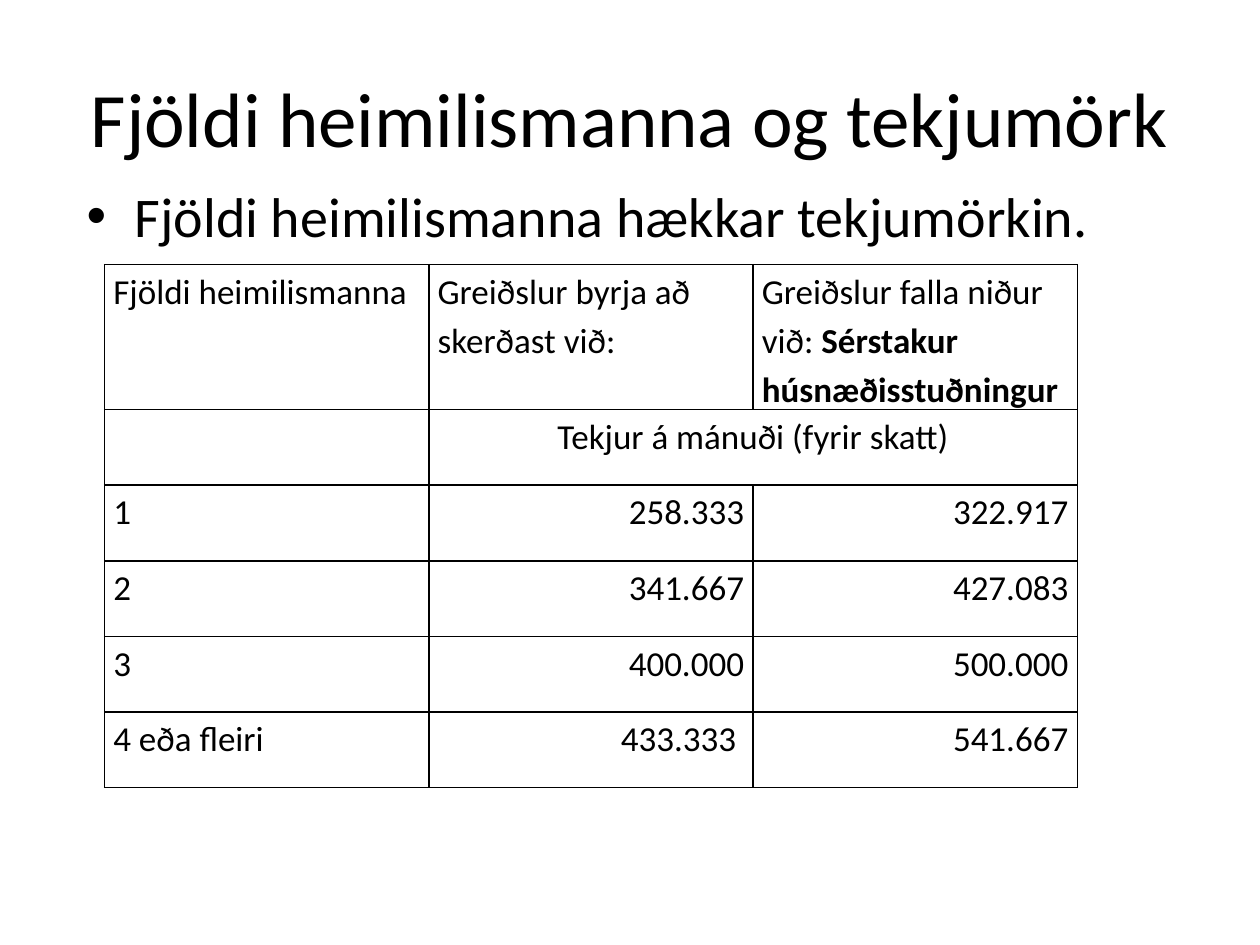
"""Build a slide on household size and income limits."""
from dataclasses import dataclass

import pptx
import pptx.dml.color
import pptx.enum.text
import pptx.oxml
import pptx.oxml.ns
import pptx.util
from pptx.util import Inches

FONT = "Calibri"
BLACK = "000000"
ALIGN = pptx.enum.text.PP_ALIGN
ANCHOR = pptx.enum.text.MSO_ANCHOR


@dataclass
class Entry:
    text: str
    bold_text: str = ""
    align: ALIGN = ALIGN.LEFT


@dataclass
class IncomeLimit:
    household: str
    reduced_from: str
    ends_at: str

    def entries(self) -> list[Entry]:
        return [
            Entry(self.household),
            Entry(self.reduced_from, align=ALIGN.RIGHT),
            Entry(self.ends_at, align=ALIGN.RIGHT),
        ]


HEADINGS = [
    Entry("Fjöldi heimilismanna"),
    Entry("Greiðslur byrja að skerðast við:"),
    Entry("Greiðslur falla niður við: ", "Sérstakur húsnæðisstuðningur"),
]
SUBHEADINGS = [Entry(""), Entry("Tekjur á mánuði (fyrir skatt)", align=ALIGN.CENTER), Entry("")]
LIMITS = [
    IncomeLimit("1", "258.333", "322.917"),
    IncomeLimit("2", "341.667", "427.083"),
    IncomeLimit("3", "400.000", "500.000"),
    IncomeLimit("4 eða fleiri", "433.333 ", "541.667"),
]


def set_color(color_owner, value: str) -> None:
    color_owner.rgb = pptx.dml.color.RGBColor.from_string(value)


def style_font(font, size: float, bold: bool = False) -> None:
    font.name = FONT
    font.size = pptx.util.Pt(size)
    font.bold = bold
    set_color(font.color, BLACK)


def add_borders(cell) -> None:
    properties = cell._tc.get_or_add_tcPr()
    for side in ("lnL", "lnR", "lnT", "lnB"):
        properties.append(pptx.oxml.parse_xml(
            f'<a:{side} {pptx.oxml.ns.nsdecls("a")} w="12700">'
            f'<a:solidFill><a:srgbClr val="{BLACK}"/></a:solidFill></a:{side}>'
        ))


def fill_cell(cell, entry: Entry) -> None:
    cell.margin_left = cell.margin_right = Inches(0.07)
    cell.margin_top = cell.margin_bottom = 0
    add_borders(cell)
    cell.fill.background()
    paragraph = cell.text_frame.paragraphs[0]
    paragraph.alignment = entry.align
    paragraph.line_spacing = 1.15
    style_font(paragraph.font, 20)
    for text, bold in ((entry.text, False), (entry.bold_text, True)):
        if text:
            run = paragraph.add_run()
            run.text = text
            style_font(run.font, 20, bold)


def add_title(slide, text: str) -> None:
    title = slide.shapes.title
    title.left, title.top = Inches(0.5), Inches(0.3)
    title.width, title.height = Inches(9), Inches(1.25)
    title.text_frame.text = text
    title.text_frame.vertical_anchor = ANCHOR.MIDDLE
    paragraph = title.text_frame.paragraphs[0]
    paragraph.alignment = ALIGN.CENTER
    style_font(paragraph.runs[0].font, 44)


def add_bullet(slide, text: str) -> None:
    statement = slide.shapes.add_textbox(Inches(0.59), Inches(1.39), Inches(9), Inches(4.6))
    statement.text_frame.word_wrap = True
    paragraph = statement.text_frame.paragraphs[0]
    paragraph.text = text
    properties = paragraph._p.get_or_add_pPr()
    properties.set("marL", str(Inches(0.38)))
    properties.set("indent", str(-Inches(0.38)))
    for bullet in ('<a:buFont {} typeface="Arial"/>', '<a:buChar {} char="•"/>'):
        properties.append(pptx.oxml.parse_xml(bullet.format(pptx.oxml.ns.nsdecls("a"))))
    style_font(paragraph.runs[0].font, 32)


def add_limits_table(slide, rows: list[list[Entry]]) -> None:
    limits = slide.shapes.add_table(
        len(rows), len(HEADINGS), Inches(0.83), Inches(2.1), Inches(7.72), Inches(4.15)
    ).table
    limits.first_row = limits.horz_banding = False
    for row_index, entries in enumerate(rows):
        limits.rows[row_index].height = Inches(0.6 if row_index else 1.15)
        for column_index, entry in enumerate(entries):
            fill_cell(limits.cell(row_index, column_index), entry)
    limits.cell(1, 1).merge(limits.cell(1, 2))


def main() -> None:
    presentation = pptx.Presentation()
    presentation.slide_width, presentation.slide_height = Inches(10), Inches(7.5)
    slide = presentation.slides.add_slide(presentation.slide_layouts[5])
    add_title(slide, "Fjöldi heimilismanna og tekjumörk")
    add_bullet(slide, "Fjöldi heimilismanna hækkar tekjumörkin.")
    add_limits_table(slide, [HEADINGS, SUBHEADINGS, *(limit.entries() for limit in LIMITS)])
    presentation.save("out.pptx")


if __name__ == "__main__":
    main()
